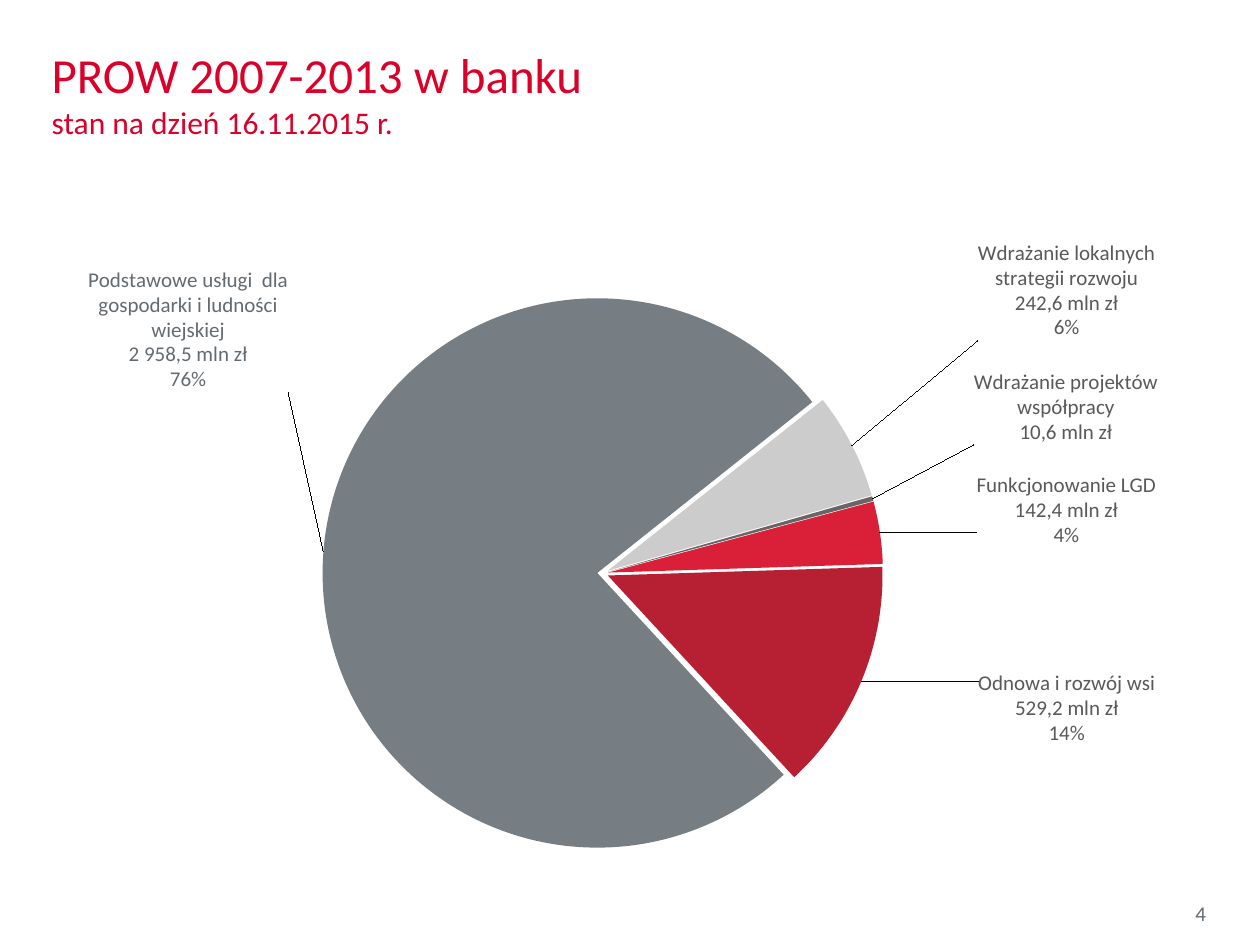
"""Build the slide with the labelled pie of programme measures."""
import dataclasses

import lxml.etree
import pptx
import pptx.chart.data
import pptx.dml.color
import pptx.enum.chart
import pptx.enum.text
import pptx.oxml.ns
import pptx.util

Cm = pptx.util.Cm
Pt = pptx.util.Pt
qn = pptx.oxml.ns.qn
ALIGN = pptx.enum.text.PP_ALIGN
FONT = "Calibri"
NUMBER_FORMAT = '#,##0.0\\ "zł"'
COLORS = {
    "title": "DA0029",
    "number": "636B71",
    "label": "595959",
    "text": "000000",
    "red": "DA2038",
    "dark_red": "B72033",
    "slate": "767E84",
    "light": "CCCCCC",
    "grey": "666666",
}


@dataclasses.dataclass(frozen=True)
class Line:
    """One line of text with its size and colour."""

    text: str
    size: float
    color: str


@dataclasses.dataclass(frozen=True)
class Measure:
    """One slice with its label, shifted by percents of the chart size."""

    name: str
    value: float
    fill: str
    details: tuple[str, ...]
    dx: float
    dy: float
    color: str = "label"


MEASURES = [
    Measure("Funkcjonowanie LGD", 142.4, "red", ("142,4 mln zł", "4%"), 7.7, 2.5),
    Measure("Odnowa i rozwój wsi", 529.2, "dark_red", ("529,2 mln zł", "14%"), 9.5, -2.1),
    Measure("Podstawowe usługi  dla gospodarki i ludności wiejskiej", 2958.5, "slate",
            ("2 958,5 mln zł", "76%"), -2.4, -34.9, "number"),
    Measure("Wdrażanie lokalnych strategii rozwoju", 242.6, "light",
            ("242,6 mln zł", "6%"), 10.3, -16),
    Measure("Wdrażanie projektów współpracy", 10.6, "grey", ("10,6 mln zł",), 8.1, -8.2),
]


def set_font(font, size: float, color: str) -> None:
    """Set the family, size and colour of a font."""
    for key, value in {"name": FONT, "size": Pt(size)}.items():
        setattr(font, key, value)
    font.color.rgb = pptx.dml.color.RGBColor.from_string(COLORS[color])


def add_run(p, line: Line) -> None:
    """Add a formatted run to a paragraph."""
    r = p.add_run()
    r.text = line.text
    set_font(r.font, line.size, line.color)


def add_text(s, box: tuple[float, ...], lines: list[Line], align) -> None:
    """Add a wrapped text box with line breaks between its lines."""
    tf = s.shapes.add_textbox(*map(Cm, box)).text_frame
    tf.word_wrap = True
    p = tf.paragraphs[0]
    p.alignment = align
    for i, line in enumerate(lines):
        if i:
            p.add_line_break()
        add_run(p, line)


def make_layout(values: dict[str, str]):
    """Return a manual chart layout element."""
    layout = lxml.etree.Element(qn("c:layout"))
    manual = lxml.etree.SubElement(layout, qn("c:manualLayout"))
    for key, value in values.items():
        lxml.etree.SubElement(manual, qn(f"c:{key}"), val=value)
    return layout


def set_flags(element, flags: dict[str, str]) -> None:
    """Set the existing display flags of a label element."""
    for key, value in flags.items():
        flag = element.find(qn(f"c:{key}"))
        if flag is not None:
            flag.set("val", value)


def format_slice(point, m: Measure, flags: dict[str, str]) -> None:
    """Fill a slice and place its label."""
    fill = point.format.fill
    fill.solid()
    fill.fore_color.rgb = pptx.dml.color.RGBColor.from_string(COLORS[m.fill])
    label = point.data_label
    tf = label.text_frame
    for i, text in enumerate((m.name, *m.details)):
        p = tf.add_paragraph() if i else tf.paragraphs[0]
        add_run(p, Line(text, 12, m.color))
    label.position = pptx.enum.chart.XL_LABEL_POSITION.BEST_FIT
    element = tf._txBody.getparent().getparent()
    shift = {"x": f"{m.dx / 100:.3f}", "y": f"{m.dy / 100:.3f}"}
    element.find(qn("c:idx")).addnext(make_layout(shift))
    set_flags(element, flags)


def add_pie(s, measures: list[Measure]) -> None:
    """Add the exploded pie with a fixed plot area and labels."""
    data = pptx.chart.data.CategoryChartData(number_format=NUMBER_FORMAT)
    data.categories = [m.name for m in measures]
    data.add_series("Series 1", [m.value for m in measures])
    chart = s.shapes.add_chart(pptx.enum.chart.XL_CHART_TYPE.PIE,
                               Cm(0.89), Cm(4.72), Cm(23.39), Cm(12.8), data).chart
    for key, value in {"has_legend": False, "has_title": False}.items():
        setattr(chart, key, value)
    set_font(chart.font, 18, "text")
    plot = chart.plots[0]
    plot.vary_by_categories = True
    series = plot.series[0]
    labels = series.data_labels
    options = {"show_value": True, "show_category_name": True, "show_percentage": True,
               "number_format": NUMBER_FORMAT, "number_format_is_linked": False,
               "position": pptx.enum.chart.XL_LABEL_POSITION.BEST_FIT}
    for key, value in options.items():
        setattr(labels, key, value)
    set_font(labels.font, 12, "label")
    flags = {"showVal": "1", "showCatName": "1", "showPercent": "1"}
    for i, m in enumerate(measures):
        format_slice(series.points[i], m, flags)

    ser = series._element
    ser.find(qn("c:dPt")).addprevious(lxml.etree.Element(qn("c:explosion"), val="2"))
    group = ser.find(qn("c:dLbls"))
    pie = ser.getparent()
    area = pie.getparent()
    for parent, tag in ((group, "c:showLeaderLines"), (pie, "c:firstSliceAng"),
                        (area, "c:layout")):
        for old in parent.findall(qn(tag)):
            parent.remove(old)
    lxml.etree.SubElement(group, qn("c:showLeaderLines"), val="1")
    lxml.etree.SubElement(pie, qn("c:firstSliceAng"), val="75")
    area.insert(0, make_layout({"layoutTarget": "inner", "xMode": "edge", "yMode": "edge",
                                "x": "0.24", "y": "0.093", "w": "0.483", "h": "0.883"}))


def main() -> None:
    """Build and save the slide."""
    prs = pptx.Presentation()
    for key, value in {"slide_width": Cm(25.4), "slide_height": Cm(19.05)}.items():
        setattr(prs, key, value)
    s = prs.slides.add_slide(prs.slide_layouts[6])
    title = [Line("PROW 2007-2013 w banku", 28, "title"),
             Line("stan na dzień 16.11.2015 r.", 18, "title")]
    add_text(s, (0.79, 0.77, 20.96, 2.72), title, ALIGN.LEFT)
    add_pie(s, MEASURES)
    add_text(s, (19.12, 18.03, 5.44, 1.02), [Line("4", 12, "number")], ALIGN.RIGHT)
    prs.save("out.pptx")


if __name__ == "__main__":
    main()
